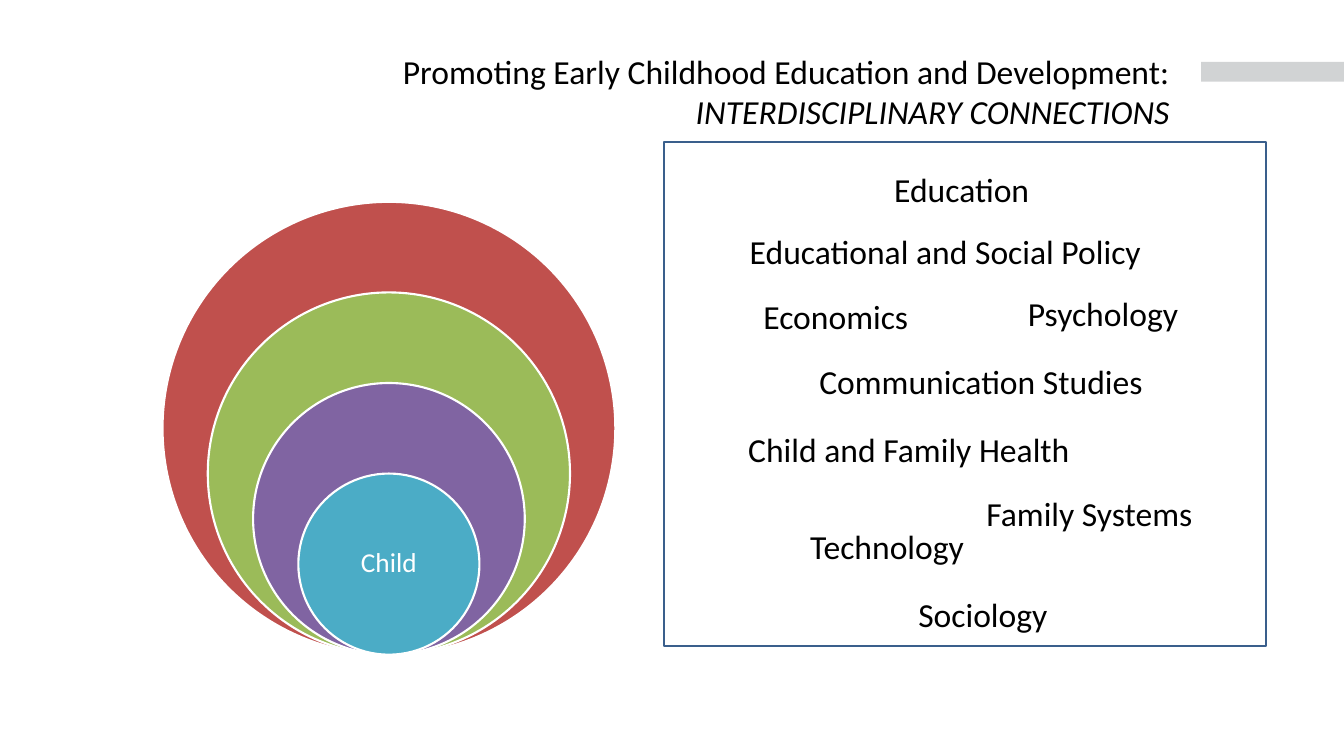
import pptx
import pptx.util
import pptx.dml.color
import pptx.enum.shapes
import pptx.enum.text

Inches = pptx.util.Inches
Pt = pptx.util.Pt
SHAPE = pptx.enum.shapes.MSO_SHAPE
ALIGN = pptx.enum.text.PP_ALIGN
ANCHOR = pptx.enum.text.MSO_ANCHOR

COLORS = {
    "text": "000000",
    "white": "FFFFFF",
    "bar": "D1D3D4",
    "frame": "3A5F8C",
    "red": "C0504D",
    "green": "9BBB59",
    "purple": "8064A2",
    "teal": "4BACC6",
}
RINGS = ["red", "green", "purple", "teal"]
DISCIPLINES = [
    ("Education", 11.73, 2.18, 7.52),
    ("Educational and Social Policy", 9.82, 3.01, 7.62),
    ("Economics", 10, 3.87, 6.36),
    ("Psychology", 13.5, 3.83, 6.36),
    ("Communication Studies", 10.74, 4.73, 6.36),
    ("Child and Family Health", 9.8, 5.62, 6.36),
    ("Family Systems", 12.95, 6.47, 6.36),
    ("Technology", 10.62, 6.91, 6.36),
    ("Sociology", 12.05, 7.81, 6.36),
]


def rgb(name):
    return pptx.dml.color.RGBColor.from_string(COLORS[name])


def apply(obj, values):
    for key, value in values.items():
        setattr(obj, key, value)


def add_run(p, text, size=32, color="text", italic=None):
    r = p.add_run()
    r.text = text
    apply(r.font, {"name": "Calibri", "size": Pt(size), "italic": italic})
    r.font.color.rgb = rgb(color)


def add_shape(s, kind, box, fill=None, line=None):
    sp = s.shapes.add_shape(kind, *map(Inches, box))
    sp.shadow.inherit = False
    if fill:
        sp.fill.solid()
        sp.fill.fore_color.rgb = rgb(fill)
    else:
        sp.fill.background()
    if line:
        sp.line.color.rgb = rgb(line)
        sp.line.width = Pt(2)
    else:
        sp.line.fill.background()
    return sp


def add_title(s, box):
    sp = s.shapes.title
    left, top, width, height = map(Inches, box)
    apply(sp, {"left": left, "top": top, "width": width, "height": height})
    tf = sp.text_frame
    apply(tf, {
        "margin_left": 0, "margin_top": 0, "margin_right": 0, "margin_bottom": 0,
        "word_wrap": True, "vertical_anchor": ANCHOR.TOP,
        "auto_size": pptx.enum.text.MSO_AUTO_SIZE.NONE,
    })
    p = tf.paragraphs[0]
    p.alignment = ALIGN.RIGHT
    add_run(p, "Promoting Early Childhood Education and Development: ")
    add_run(p, "INTERDISCIPLINARY CONNECTIONS", italic=True)


def add_nested_circles(s, box):
    left, top, width, height = box
    for i, color in enumerate(RINGS):
        d = width * (1 - i / (len(RINGS) + 1))
        sp = add_shape(s, SHAPE.OVAL,
                       (left + (width - d) / 2, top + height - d, d, d),
                       color, "white")
    sp.text_frame.vertical_anchor = ANCHOR.MIDDLE
    p = sp.text_frame.paragraphs[0]
    apply(p, {"alignment": ALIGN.CENTER, "line_spacing": 0.9})
    add_run(p, "Child", 26, "white")


def add_disciplines(s, box):
    for text, left, top, width in DISCIPLINES:
        sp = s.shapes.add_textbox(*map(Inches, (left, top, width, 0.64)))
        tf = sp.text_frame
        tf.word_wrap = True
        add_run(tf.paragraphs[0], text)
    add_shape(s, SHAPE.RECTANGLE, box, line="frame")


def main():
    prs = pptx.Presentation()
    apply(prs, {"slide_width": Inches(17.78), "slide_height": Inches(10)})
    s = prs.slides.add_slide(prs.slide_layouts[5])
    add_shape(s, SHAPE.RECTANGLE, (15.89, 0.82, 1.89, 0.26), "bar")
    add_title(s, (2.71, 0.67, 12.77, 0.53))
    add_nested_circles(s, (2.15, 2.67, 5.99, 5.99))
    add_disciplines(s, (8.78, 1.88, 7.97, 6.67))
    prs.save("out.pptx")


if __name__ == "__main__":
    main()
